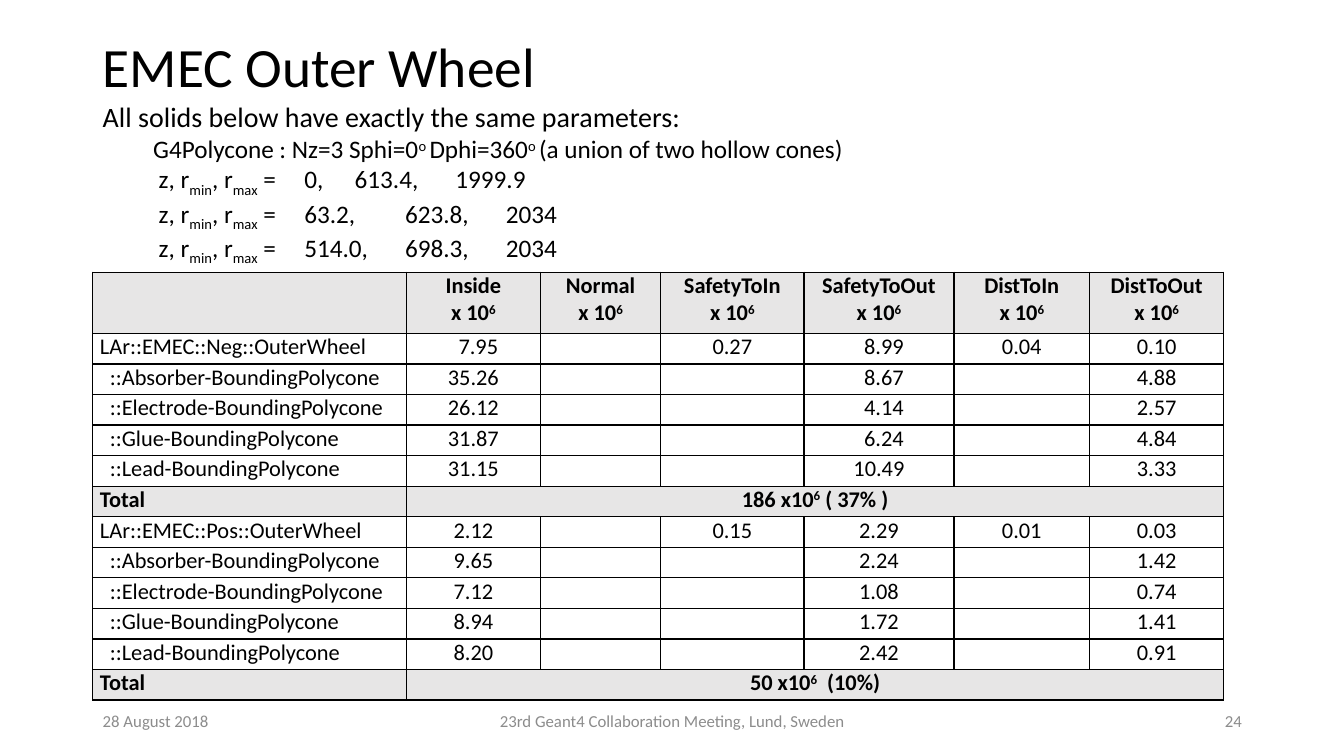
from dataclasses import dataclass

from lxml.etree import SubElement
from pptx import Presentation
from pptx.dml.color import RGBColor
from pptx.enum.text import MSO_ANCHOR, PP_ALIGN
from pptx.oxml.ns import qn
from pptx.util import Cm, Pt


@dataclass(frozen=True)
class Theme:
    face: str = "Calibri"
    ink: str = "000000"
    gray: str = "8C8C8C"
    band: str = "E7E6E6"
    paper: str = "FFFFFF"
    title: float = 39.6
    lead: float = 20
    body: float = 18
    cell: float = 16
    foot: float = 12
    rule: float = 1
    sup: int = 30000
    sub: int = -25000


class Deck:
    def __init__(self, theme):
        self.theme = theme
        self.show = Presentation()
        self.show.slide_width, self.show.slide_height = Cm(33.87), Cm(19.05)
        self.slide = self.show.slides.add_slide(self.show.slide_layouts[6])

    def words(self, para, text, size, color=None, bold=False, align=PP_ALIGN.LEFT, shift=0):
        para.alignment = align
        font = para.font
        font.name, font.size, font.bold = self.theme.face, Pt(size), bold
        font.color.rgb = RGBColor.from_string(color or self.theme.ink)
        for index, piece in enumerate(text.split("|")):
            for row, line in enumerate(piece.split("\n")):
                if row:
                    para.add_line_break()
                if line:
                    run = para.add_run()
                    run.text = line
                    if index % 2:
                        run._r.get_or_add_rPr().set("baseline", str(shift))

    def frame(self, left, top, width, height, anchor=MSO_ANCHOR.MIDDLE):
        box = self.slide.shapes.add_textbox(Cm(left), Cm(top), Cm(width), Cm(height))
        box.text_frame.word_wrap = True
        box.text_frame.vertical_anchor = anchor
        return box.text_frame

    def label(self, place, text, size, color=None, align=PP_ALIGN.LEFT, space=1.0):
        para = self.frame(*place).paragraphs[0]
        para.line_spacing = space
        self.words(para, text, size, color, align=align)

    def detail(self, frame, text, shift, indent, stops=()):
        para = frame.add_paragraph()
        props = para._p.get_or_add_pPr()
        props.set("marL", "0")
        props.set("indent", str(Cm(indent)))
        if stops:
            tabs = SubElement(props, qn("a:tabLst"))
            for pos, side in stops:
                SubElement(tabs, qn("a:tab"), pos=str(Cm(pos)), algn=side)
        self.words(para, text, self.theme.body, shift=shift)

    def grid(self, left, top, widths, heights):
        shape = self.slide.shapes.add_table(
            len(heights), len(widths), Cm(left), Cm(top), Cm(sum(widths)), Cm(sum(heights)))
        table = shape.table
        table.first_row = table.horz_banding = False
        for column, width in zip(table.columns, widths):
            column.width = Cm(width)
        for row, height in zip(table.rows, heights):
            row.height = Cm(height)
        return table

    def cell(self, cell, text, fill, bold=False, align=PP_ALIGN.CENTER, pad=0):
        cell.margin_left, cell.margin_right = Cm(0.18 + pad), Cm(0.18)
        cell.margin_top = cell.margin_bottom = 0
        props = cell._tc.get_or_add_tcPr()
        for side in ("lnL", "lnR", "lnT", "lnB"):
            line = SubElement(props, qn("a:" + side), w=str(Pt(self.theme.rule)))
            ink = SubElement(line, qn("a:solidFill"))
            SubElement(ink, qn("a:srgbClr"), val=self.theme.ink)
        cell.fill.solid()
        cell.fill.fore_color.rgb = RGBColor.from_string(fill)
        self.words(cell.text_frame.paragraphs[0], text, self.theme.cell,
                   bold=bold, align=align, shift=self.theme.sup)


HEADS = ["Inside", "Normal", "SafetyToIn", "SafetyToOut", "DistToIn", "DistToOut"]
PARTS = ["Absorber", "Electrode", "Glue", "Lead"]
WHEELS = [
    ("Neg", "186 x10|6| ( 37% )", [
        ["7.95", "", "0.27", "8.99", "0.04", "0.10"],
        ["35.26", "", "", "8.67", "", "4.88"],
        ["26.12", "", "", "4.14", "", "2.57"],
        ["31.87", "", "", "6.24", "", "4.84"],
        ["31.15", "", "", "10.49", "", "3.33"]]),
    ("Pos", "50 x10|6|  (10%)", [
        ["2.12", "", "0.15", "2.29", "0.01", "0.03"],
        ["9.65", "", "", "2.24", "", "1.42"],
        ["7.12", "", "", "1.08", "", "0.74"],
        ["8.94", "", "", "1.72", "", "1.41"],
        ["8.20", "", "", "2.42", "", "0.91"]]),
]
CONES = [("0", "613.4", "1999.9"), ("63.2", "623.8", "2034"), ("514.0", "698.3", "2034")]


def fill_table(deck):
    theme = deck.theme
    table = deck.grid(2.34, 6.86, [7.9, 3.38, 3.03, 3.61, 3.78, 3.42, 3.38],
                      [1.54] + [0.77] * 12)
    deck.cell(table.cell(0, 0), "", theme.band)
    for col, head in enumerate(HEADS, 1):
        deck.cell(table.cell(0, col), head + "\nx 10|6|", theme.band, True)
    row = 1
    for side, total, rows in WHEELS:
        names = [f"LAr::EMEC::{side}::OuterWheel"]
        names += [f"::{part}-BoundingPolycone" for part in PARTS]
        widest = [max(map(len, column)) for column in zip(*rows)]
        for step, (name, values) in enumerate(zip(names, rows)):
            deck.cell(table.cell(row, 0), name, theme.paper,
                      align=PP_ALIGN.LEFT, pad=0.25 if step else 0)
            for col, value in enumerate(values, 1):
                pad = 0.25 if value and len(value) < widest[col - 1] else 0
                deck.cell(table.cell(row, col), value, theme.paper, pad=pad)
            row += 1
        deck.cell(table.cell(row, 0), "Total", theme.band, True, PP_ALIGN.LEFT)
        for col in range(1, len(HEADS) + 1):
            deck.cell(table.cell(row, col), total if col == 1 else "", theme.band, True)
        table.cell(row, 1).merge(table.cell(row, len(HEADS)))
        row += 1


def main():
    theme = Theme()
    deck = Deck(theme)
    deck.label((2.34, 1.02, 29.21, 1.47), "EMEC Outer Wheel", theme.title, space=0.9)
    fill_table(deck)

    frame = deck.frame(2.34, 2.39, 29.21, 4.19, MSO_ANCHOR.TOP)
    deck.words(frame.paragraphs[0], "All solids below have exactly the same parameters:", theme.lead)
    deck.detail(frame, "G4Polycone : Nz=3 Sphi=0|o |Dphi=360|o |(a union of two hollow cones)",
                theme.sup, 1.27)
    stops = [(6.09, "r"), (6.3, "l"), (8.23, "l")]
    for cone in CONES:
        deck.detail(frame, "z, r|min|, r|max| =\t" + ",\t".join(cone), theme.sub, 1.41, stops)

    for left, width, text, align in [
            (2.34, 7.62, "28 August 2018", PP_ALIGN.LEFT),
            (11.23, 11.43, "23rd Geant4 Collaboration Meeting, Lund, Sweden", PP_ALIGN.CENTER),
            (23.93, 7.62, "24", PP_ALIGN.RIGHT)]:
        deck.label((left, 17.65, width, 1.02), text, theme.foot, theme.gray, align)
    deck.show.save("out.pptx")


if __name__ == "__main__":
    main()
